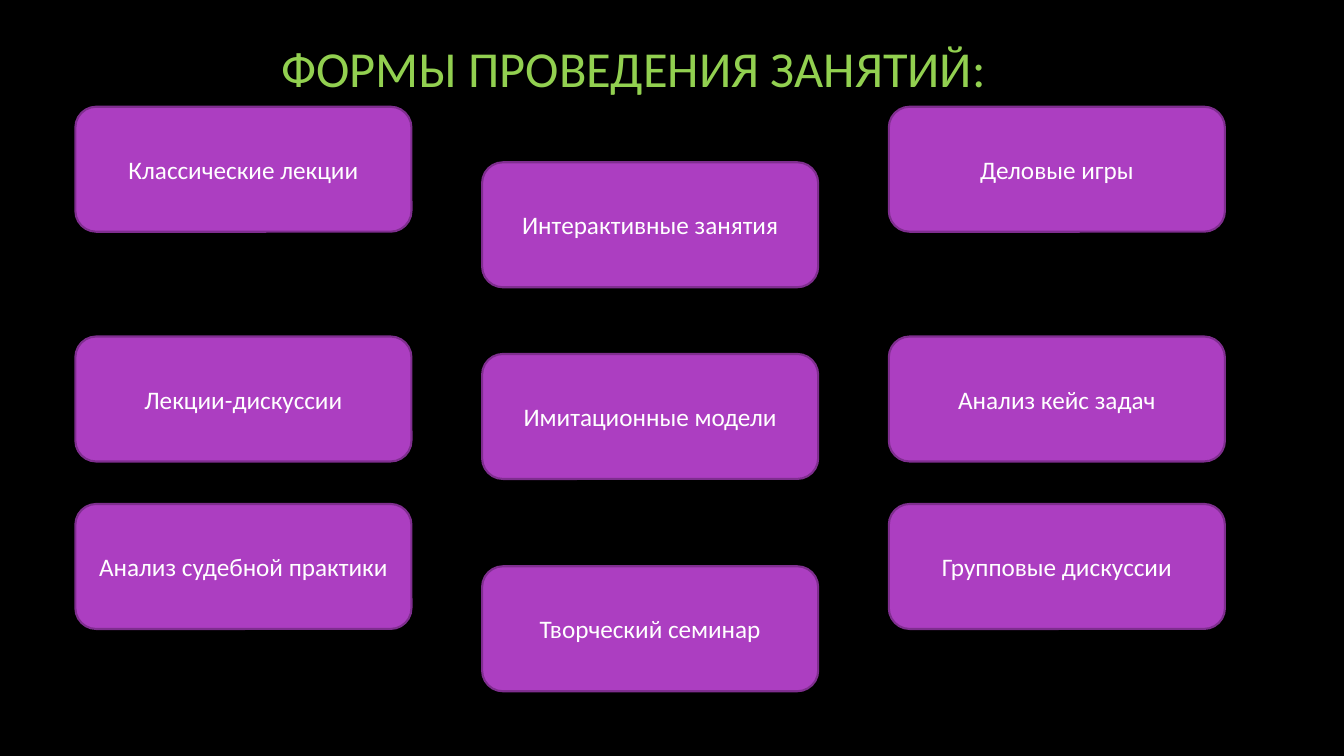
from pptx import Presentation
from pptx.dml.color import RGBColor
from pptx.enum.shapes import MSO_SHAPE
from pptx.enum.text import MSO_ANCHOR, PP_ALIGN
from pptx.util import Cm, Pt

TITLE = "ФОРМЫ ПРОВЕДЕНИЯ ЗАНЯТИЙ:"
OUTER_TOPS = (2.69, 8.48, 12.7)
MIDDLE_TOPS = (4.09, 8.92, 14.27)
COLUMNS = [
    (OUTER_TOPS, ("Классические лекции", "Лекции-дискуссии", "Анализ судебной практики")),
    (MIDDLE_TOPS, ("Интерактивные занятия", "Имитационные модели", "Творческий семинар")),
    (OUTER_TOPS, ("Деловые игры", "Анализ кейс задач", "Групповые дискуссии")),
]

LEFT = 1.9
COLUMN_STEP = 10.25
CARD_WIDTH, CARD_HEIGHT = 8.47, 3.15

FONT = "Calibri"
BLACK = RGBColor(0x00, 0x00, 0x00)
WHITE = RGBColor(0xFF, 0xFF, 0xFF)
GREEN = RGBColor(0x92, 0xD0, 0x50)
PURPLE = RGBColor(0xAC, 0x3E, 0xC1)
DARK_PURPLE = RGBColor(0x7F, 0x2E, 0x8F)

ROUNDED = MSO_SHAPE.ROUNDED_RECTANGLE
MIDDLE = MSO_ANCHOR.MIDDLE
CENTER = PP_ALIGN.CENTER


def write_centered(shape, text, size, color):
    frame = shape.text_frame
    frame.word_wrap = True
    frame.vertical_anchor = MIDDLE
    para = frame.paragraphs[0]
    para.alignment = CENTER
    span = para.add_run()
    span.text = text
    span.font.name = FONT
    span.font.size = Pt(size)
    span.font.color.rgb = color


def add_card(slide, left, top, text):
    card = slide.shapes.add_shape(
        ROUNDED, Cm(left), Cm(top), Cm(CARD_WIDTH), Cm(CARD_HEIGHT))
    card.shadow.inherit = False
    card.fill.solid()
    card.fill.fore_color.rgb = PURPLE
    card.line.color.rgb = DARK_PURPLE
    card.line.width = Pt(1.5)
    write_centered(card, text, 18, WHITE)


def main():
    deck = Presentation()
    deck.slide_width, deck.slide_height = Cm(33.87), Cm(19.05)
    slide = deck.slides.add_slide(deck.slide_layouts[5])
    slide.background.fill.solid()
    slide.background.fill.fore_color.rgb = BLACK

    title = slide.shapes.title
    title.left, title.top = Cm(LEFT), Cm(0.76)
    title.width, title.height = Cm(28.14), Cm(1.88)
    write_centered(title, TITLE, 36, GREEN)

    for column, (tops, labels) in enumerate(COLUMNS):
        for top, label in zip(tops, labels):
            add_card(slide, LEFT + column * COLUMN_STEP, top, label)

    deck.save("out.pptx")


if __name__ == "__main__":
    main()
